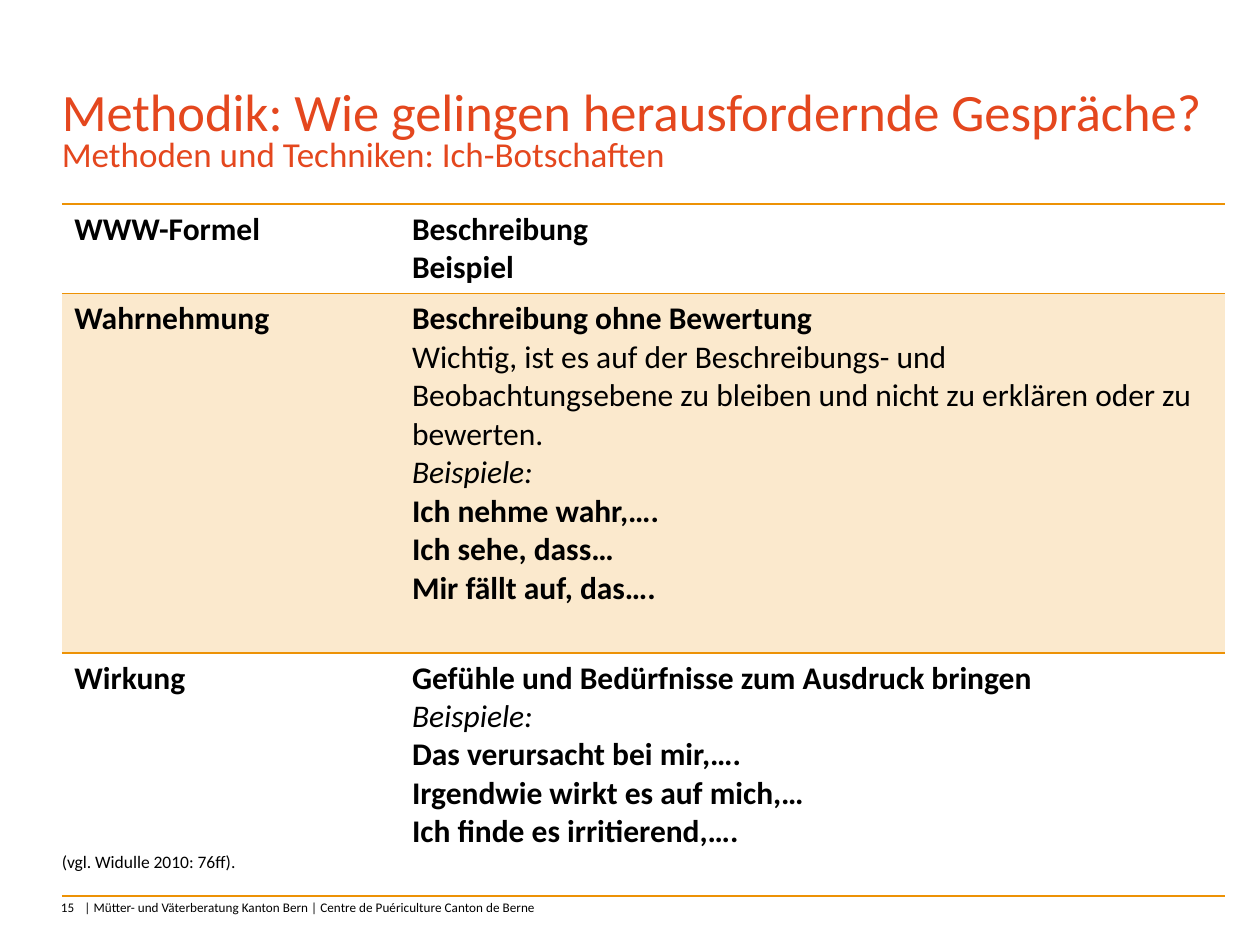
from lxml.etree import SubElement
from pptx import Presentation
from pptx.dml.color import RGBColor
from pptx.enum.text import MSO_ANCHOR as Anchor, PP_ALIGN as Align
from pptx.oxml.ns import qn
from pptx.util import Inches, Pt

COLORS = {
    "title": "E4471E",
    "text": "000000",
    "rule": "ED9205",
    "band": "FBE9CD",
}
PLAIN_TABLE = "{2D5ABB26-0587-4C30-8999-92F81FD0307C}"
BOLD, ITALIC, REGULAR = (True, False), (False, True), (False, False)


class SlideBuilder:
    """Style and current slide; lengths are in grid steps."""

    font = "Calibri"
    columns, rows = 100, 75

    def __init__(self, deck, layout):
        self.slide = deck.slides.add_slide(deck.slide_layouts[layout])
        self.step_x = deck.slide_width / self.columns
        self.step_y = deck.slide_height / self.rows

    def x(self, steps):
        return round(steps * self.step_x)

    def y(self, steps):
        return round(steps * self.step_y)

    def box(self, left, top, width, height):
        return self.x(left), self.y(top), self.x(width), self.y(height)

    def add_run(self, paragraph, text, size, color, emphasis=REGULAR):
        run = paragraph.add_run()
        run.text = text
        run.font.name = self.font
        run.font.size = Pt(size)
        run.font.bold, run.font.italic = emphasis
        run.font.color.rgb = RGBColor.from_string(COLORS[color])

    def fill_frame(self, frame, text, size, color, align, anchor):
        frame.word_wrap = True
        frame.margin_left = frame.margin_right = 0
        frame.margin_top = frame.margin_bottom = 0
        frame.vertical_anchor = anchor
        paragraph = frame.paragraphs[0]
        properties = paragraph._p.get_or_add_pPr()
        properties.set("marL", "0")
        properties.set("indent", "0")
        SubElement(properties, qn("a:buNone"))
        paragraph.alignment = align
        paragraph.space_before = Pt(0)
        self.add_run(paragraph, text, size, color)

    def placeholder(self, index, place, text, size, color):
        holder = self.slide.placeholders[index]
        holder.left, holder.top, holder.width, holder.height = self.box(*place)
        self.fill_frame(holder.text_frame, text, size, color, Align.LEFT, Anchor.MIDDLE)

    def label(self, place, text, size, align=Align.LEFT):
        frame = self.slide.shapes.add_textbox(*self.box(*place)).text_frame
        self.fill_frame(frame, text, size, "text", align, Anchor.TOP)

    def border(self, cell, side):
        line = SubElement(cell._tc.get_or_add_tcPr(), qn(f"a:{side}"), w=str(Pt(1)))
        fill = SubElement(line, qn("a:solidFill"))
        SubElement(fill, qn("a:srgbClr"), val=COLORS["rule"])

    def table(self, left, top, widths, heights, content, size, ruled, banded):
        place = self.box(left, top, sum(widths), sum(heights))
        table = self.slide.shapes.add_table(len(heights), len(widths), *place).table
        table.first_row = table.horz_banding = False
        table._tbl.tblPr.find(qn("a:tableStyleId")).text = PLAIN_TABLE
        for column, width in zip(table.columns, widths):
            column.width = self.x(width)
        for number, (height, texts) in enumerate(zip(heights, content)):
            table.rows[number].height = self.y(height)
            for cell, lines in zip(table.rows[number].cells, texts):
                for side in ruled[number]:
                    self.border(cell, side)
                if number in banded:
                    cell.fill.solid()
                    cell.fill.fore_color.rgb = RGBColor.from_string(COLORS["band"])
                else:
                    cell.fill.background()
                frame = cell.text_frame
                for position, (text, emphasis) in enumerate(lines):
                    paragraph = frame.add_paragraph() if position else frame.paragraphs[0]
                    self.add_run(paragraph, text, size, "text", emphasis)


FORMULA = [
    [
        [("WWW-Formel", BOLD)],
        [("Beschreibung", BOLD), ("Beispiel", BOLD)],
    ],
    [
        [("Wahrnehmung", BOLD)],
        [
            ("Beschreibung ohne Bewertung", BOLD),
            ("Wichtig, ist es auf der Beschreibungs- und Beobachtungsebene "
             "zu bleiben und nicht zu erklären oder zu bewerten.", REGULAR),
            ("Beispiele:", ITALIC),
            ("Ich nehme wahr,….", BOLD),
            ("Ich sehe, dass…", BOLD),
            ("Mir fällt auf, das….", BOLD),
        ],
    ],
    [
        [("Wirkung", BOLD)],
        [
            ("Gefühle und Bedürfnisse zum Ausdruck bringen", BOLD),
            ("Beispiele:", ITALIC),
            ("Das verursacht bei mir,….", BOLD),
            ("Irgendwie wirkt es auf mich,…", BOLD),
            ("Ich finde es irritierend,….", BOLD),
        ],
    ],
]


def main():
    deck = Presentation()
    deck.slide_width, deck.slide_height = Inches(10), Inches(7.5)
    page = SlideBuilder(deck, layout=3)
    margin = 4.9

    # Title, subtitle and citation
    page.placeholder(0, (margin, 6.6, 92.3, 4.3),
                     "Methodik: Wie gelingen herausfordernde Gespräche?", 30, "title")
    page.placeholder(1, (margin, 10.4, 90.3, 3.5),
                     "Methoden und Techniken: Ich-Botschaften", 20, "title")
    page.placeholder(2, (margin, 67.5, 90.3, 1.8),
                     "(vgl. Widulle 2010: 76ff).", 10, "text")

    # Formula table
    page.table(margin, 16.2, widths=(26.8, 65.5), heights=(7.1, 28.5, 19.3),
               content=FORMULA, size=18,
               ruled=(("lnT", "lnB"), ("lnT",), ("lnB",)), banded={1})

    # Footer
    page.label((3.1, 71.4, 2.8, 0.9), "15", 7.5, Align.RIGHT)
    page.label((6.7, 71.4, 55.5, 0.9),
               "| Mütter- und Väterberatung Kanton Bern | "
               "Centre de Puériculture Canton de Berne", 7.5)

    deck.save("out.pptx")


if __name__ == "__main__":
    main()
